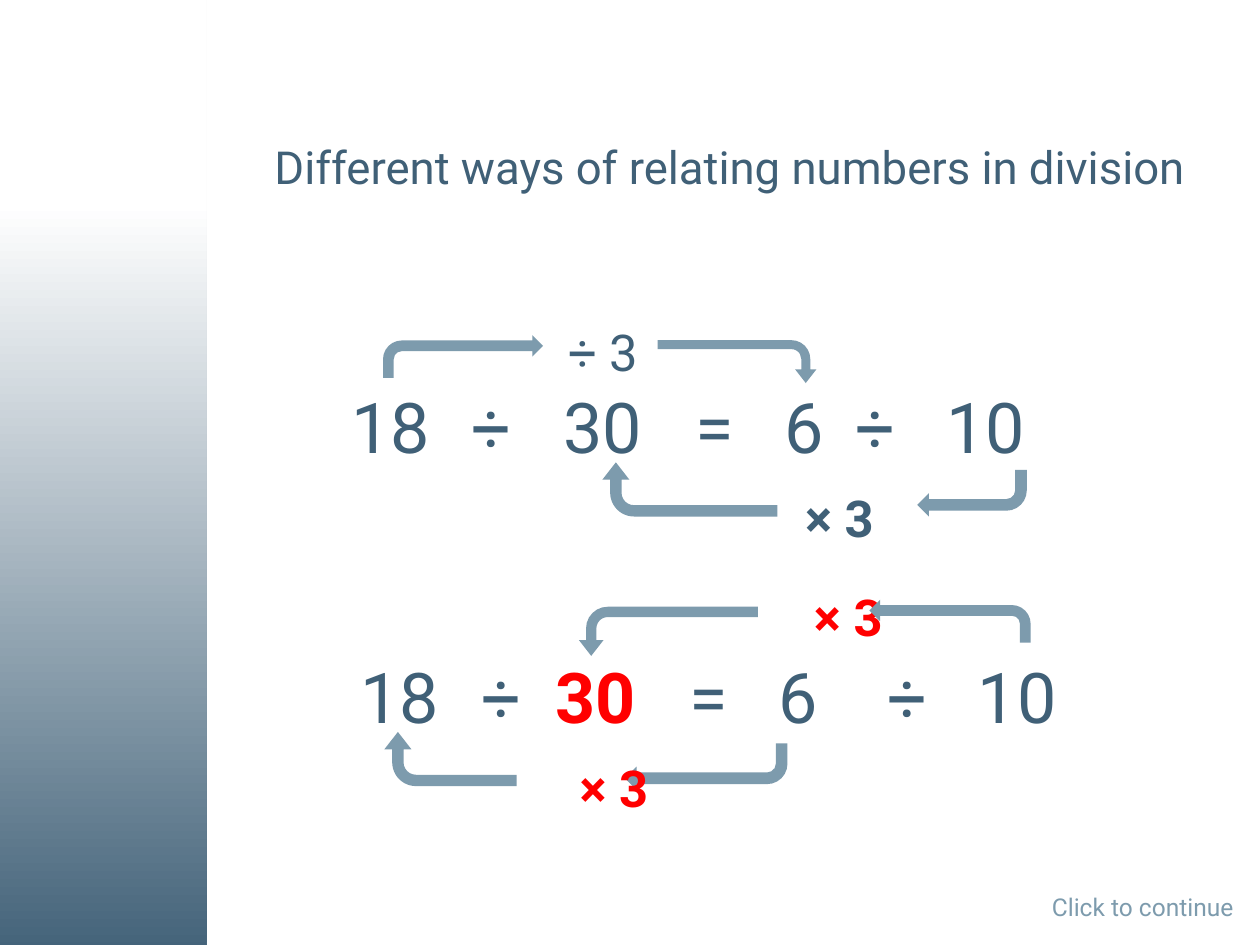
from lxml import etree
from pptx import Presentation
from pptx.dml.color import RGBColor
from pptx.enum.shapes import MSO_SHAPE
from pptx.enum.text import PP_ALIGN
from pptx.oxml.ns import qn
from pptx.util import Inches, Pt

BENT, RECT = MSO_SHAPE.BENT_ARROW, MSO_SHAPE.RECTANGLE
LEFT, RIGHT = PP_ALIGN.LEFT, PP_ALIGN.RIGHT
COLS, ROWS, CELL = 100, 75, Inches(0.1)
FONT = "Roboto"
INK = {"dark": "406077", "mid": "7D9BAD", "red": "FF0000", "white": "FFFFFF"}
BIG, SMALL = 40, 29
THIN = (0.21, 0.25, 0.32, 0.44)


def grid(*cells):
    """Turn counts of grid cells into lengths."""
    return [int(n * CELL) for n in cells]


def rgb(name):
    """Look up a colour by name."""
    return RGBColor.from_string(INK[name])


def style(font, size, ink, bold=False):
    """Set the face, size, colour and weight of a font."""
    font.name, font.size, font.bold = FONT, Pt(size), bold
    font.color.rgb = rgb(ink)


def frame(slide, at, top=0.5, left=1):
    """Add a wrapping text box and return its text frame."""
    text = slide.shapes.add_textbox(*grid(*at)).text_frame
    text.word_wrap = True
    text.margin_top, text.margin_left = grid(top, left)
    return text


def label(slide, at, words, size, ink, align=LEFT, top=0.5):
    """Add one line of text."""
    para = frame(slide, at, top).paragraphs[0]
    para.text, para.alignment = words, align
    style(para.font, size, ink)


def tabs(para, stops):
    """Give a paragraph left tab stops, counted in columns."""
    props = para._p.get_or_add_pPr()
    group = etree.SubElement(props, qn("a:tabLst"))
    for stop in grid(*stops):
        etree.SubElement(group, qn("a:tab"), pos=str(stop), algn="l")


def line(para, parts, stops, size, gap=0):
    """Fill a paragraph with tabbed parts, each a (words, ink, bold) run."""
    tabs(para, stops)
    if gap:
        para.space_before = Pt(gap)
    same = len({part[1:] for part in parts}) == 1
    if same:
        style(para.font, size, *parts[0][1:])
    for words, ink, bold in parts:
        run = para.add_run()
        run.text = words
        if not same:
            style(run.font, size, ink, bold)


def sum_box(slide, at, top, stops, parts, over, under, gap):
    """Add an equation with one note above it and one below."""
    text = frame(slide, at, top, 0.7)
    line(text.paragraphs[0], [over[1]], [over[0]], SMALL)
    line(text.add_paragraph(), parts, stops, BIG, gap)
    line(text.add_paragraph(), [under[1]], [under[0]], SMALL, 11)


def arrow(slide, at, flip="", turn=0, adj=()):
    """Add a bent arrow, flipped along H or V and turned."""
    shape = slide.shapes.add_shape(BENT, *grid(*at))
    shape.shadow.inherit = False
    shape.fill.solid()
    shape.fill.fore_color.rgb = rgb("mid")
    shape.line.fill.background()
    shape.rotation = turn
    for i, part in enumerate(adj):
        shape.adjustments[i] = part
    for way in flip:
        shape._element.spPr.find(qn("a:xfrm")).set("flip" + way, "1")


def band(slide):
    """Add the fading side band."""
    shape = slide.shapes.add_shape(RECT, *grid(0, 0, 16.4, 76.7))
    shape.shadow.inherit = False
    shape.line.fill.background()
    shape.fill.gradient()
    shape.fill.gradient_angle = 90
    stops = shape.fill.gradient_stops
    for stop, ink, spot in zip(stops, ("dark", "white"), (0, 0.79)):
        stop.color.rgb, stop.position = rgb(ink), spot


def main():
    """Build the slide and save it."""
    deck = Presentation()
    deck.slide_width, deck.slide_height = grid(COLS, ROWS)
    slide = deck.slides.add_slide(deck.slide_layouts[6])
    band(slide)
    label(slide, (20.8, 9.6, 78, 12.5),
          "Different ways of relating numbers in division", 26, "dark", top=1.4)
    label(slide, (81.6, 70.3, 17.3, 3.4), "Click to continue", 14, "mid", RIGHT)

    arrow(slide, (49.6, 59, 12.9, 3.7), "HV")
    arrow(slide, (56.8, 22.4, 3.4, 12.6), "", 90, THIN)
    arrow(slide, (30.4, 26.6, 12.7, 3.4))
    arrow(slide, (33.6, 55, 4.3, 10.5), "HV", 90, THIN)
    times = ("\t× 3", "red", True)
    sum_box(slide, (27.9, 44.2, 64.6, 21.2), 2.3,
            (9.6, 15.5, 26.1, 33.2, 41.8, 49),
            [("18\t÷\t", "dark", False), ("30", "red", True),
             ("\t=\t6\t÷\t10", "dark", False)],
            (36, times), (17.4, times), 4)
    arrow(slide, (51.1, 43, 3.9, 14.2), "V", 90, THIN)
    arrow(slide, (69, 47.6, 12.8, 3.4), "H")
    sum_box(slide, (27.2, 24.6, 62.4, 19.4), 0.9,
            (9.5, 16.8, 27.3, 34.4, 40, 47.2),
            [("18\t÷\t30\t=\t6\t÷\t10", "dark", False)],
            (17.2, ("\t÷ 3", "dark", False)),
            (36, ("\t× 3", "dark", True)), 1)
    arrow(slide, (72.8, 37.3, 8.7, 3.7), "HV")
    arrow(slide, (52.6, 31.9, 4.3, 13.9), "HV", 90, THIN)
    deck.save("out.pptx")


if __name__ == "__main__":
    main()
